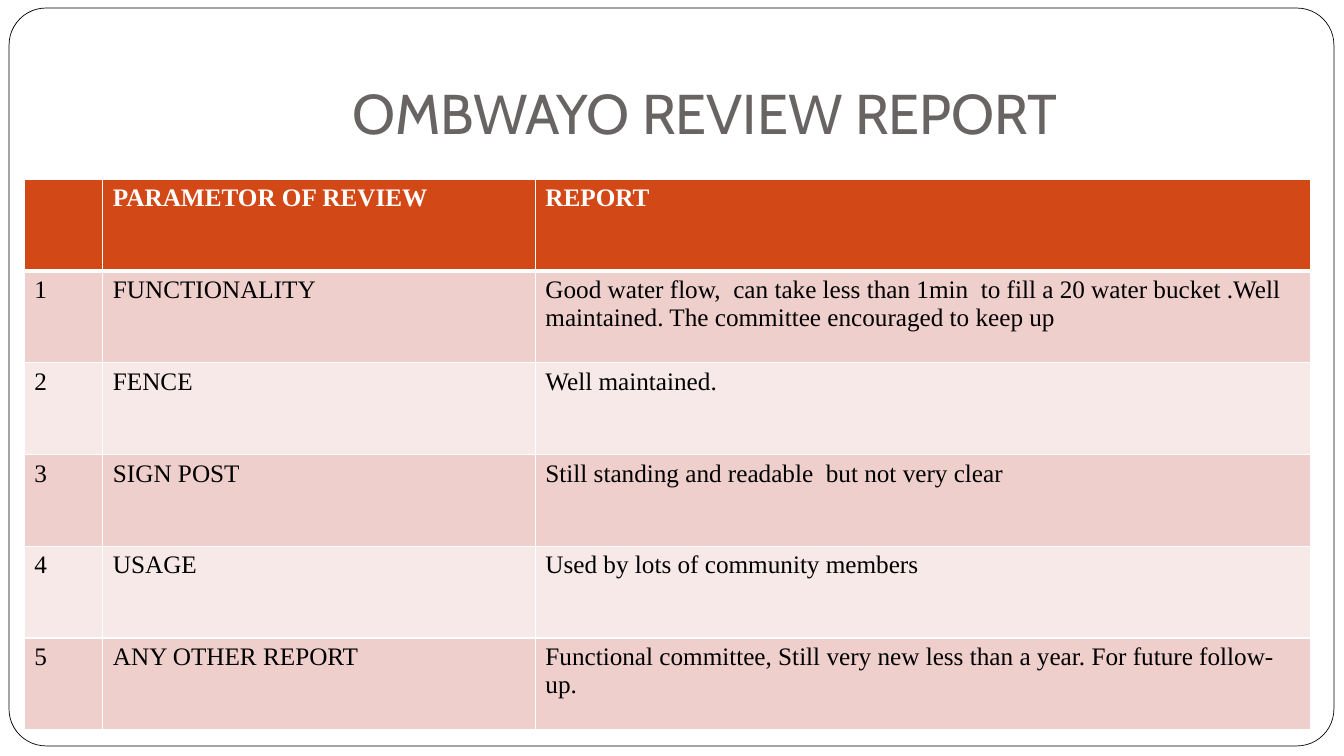
from lxml import etree
from pptx import Presentation
from pptx.dml.color import RGBColor
from pptx.enum import shapes, text
from pptx.oxml import ns
from pptx.util import Inches, Pt

COLORS = {
    "white": "FFFFFF",
    "black": "000000",
    "title": "696464",
    "header": "D34817",
    "odd": "EFCFCC",
    "even": "F7E9E8",
}
COLUMN_WIDTHS = [0.78, 4.29, 7.69]
ROW_HEIGHT = 0.91
HEADER = ["", "PARAMETOR OF REVIEW", "REPORT"]
REVIEWS = [
    ("FUNCTIONALITY", "Good water flow,  can take less than 1min  to fill a 20 water bucket "
     ".Well maintained. The committee encouraged to keep up"),
    ("FENCE", "Well maintained."),
    ("SIGN POST", "Still standing and readable  but not very clear"),
    ("USAGE", "Used by lots of community members"),
    ("ANY OTHER REPORT", "Functional committee, Still very new less than a year. "
     "For future follow-up."),
]


def rgb(name):
    return RGBColor.from_string(COLORS[name])


def style_font(p, name, size, color, bold=False):
    p.font.name = name
    p.font.size = Pt(size)
    p.font.bold = bold
    p.font.color.rgb = rgb(color)


def add_frame(s):
    sp = s.shapes.add_shape(shapes.MSO_SHAPE.ROUNDED_RECTANGLE,
                            Inches(0.09), Inches(0.08), Inches(13.14), Inches(7.32))
    sp.adjustments[0] = 0.05
    sp.shadow.inherit = False
    sp.fill.solid()
    sp.fill.fore_color.rgb = rgb("white")
    sp.line.color.rgb = rgb("black")
    sp.line.width = Pt(0.5)


def add_title(s, title):
    sp = s.shapes.add_textbox(Inches(1.33), Inches(0.3), Inches(11.33), Inches(1.25))
    tf = sp.text_frame
    tf.word_wrap = True
    tf.vertical_anchor = text.MSO_ANCHOR.BOTTOM
    tf.margin_bottom = Inches(0.1)
    p = tf.paragraphs[0]
    p.text = title
    p.alignment = text.PP_ALIGN.CENTER
    style_font(p, "Cabin", 40, "title")


def set_borders(cell, bottom):
    tcPr = cell._tc.get_or_add_tcPr()
    for side, width in (("L", 1), ("R", 1), ("T", 1), ("B", bottom)):
        ln = etree.SubElement(tcPr, ns.qn(f"a:ln{side}"), w=str(Pt(width)))
        fill = etree.SubElement(ln, ns.qn("a:solidFill"))
        etree.SubElement(fill, ns.qn("a:srgbClr"), val=COLORS["white"])


def fill_row(row, values, fill, color, bold=False, bottom=1):
    row.height = Inches(ROW_HEIGHT)
    for cell, value in zip(row.cells, values):
        set_borders(cell, bottom)
        cell.fill.solid()
        cell.fill.fore_color.rgb = rgb(fill)
        p = cell.text_frame.paragraphs[0]
        p.text = value
        style_font(p, "Times New Roman", 18, color, bold)


def add_review_table(s):
    row_count = len(REVIEWS) + 1
    table = s.shapes.add_table(row_count, len(HEADER), Inches(0.24), Inches(1.78),
                               Inches(sum(COLUMN_WIDTHS)),
                               Inches(ROW_HEIGHT * row_count)).table
    for column, width in zip(table.columns, COLUMN_WIDTHS):
        column.width = Inches(width)
    fill_row(table.rows[0], HEADER, "header", "white", bold=True, bottom=3)
    for number, review in enumerate(REVIEWS, 1):
        fill_row(table.rows[number], (str(number), *review),
                 "odd" if number % 2 else "even", "black")


def main():
    prs = Presentation()
    prs.slide_width = Inches(13.33)
    prs.slide_height = Inches(7.5)
    s = prs.slides.add_slide(prs.slide_layouts[6])
    add_frame(s)
    add_title(s, "OMBWAYO REVIEW REPORT")
    add_review_table(s)
    prs.save("out.pptx")


if __name__ == "__main__":
    main()
